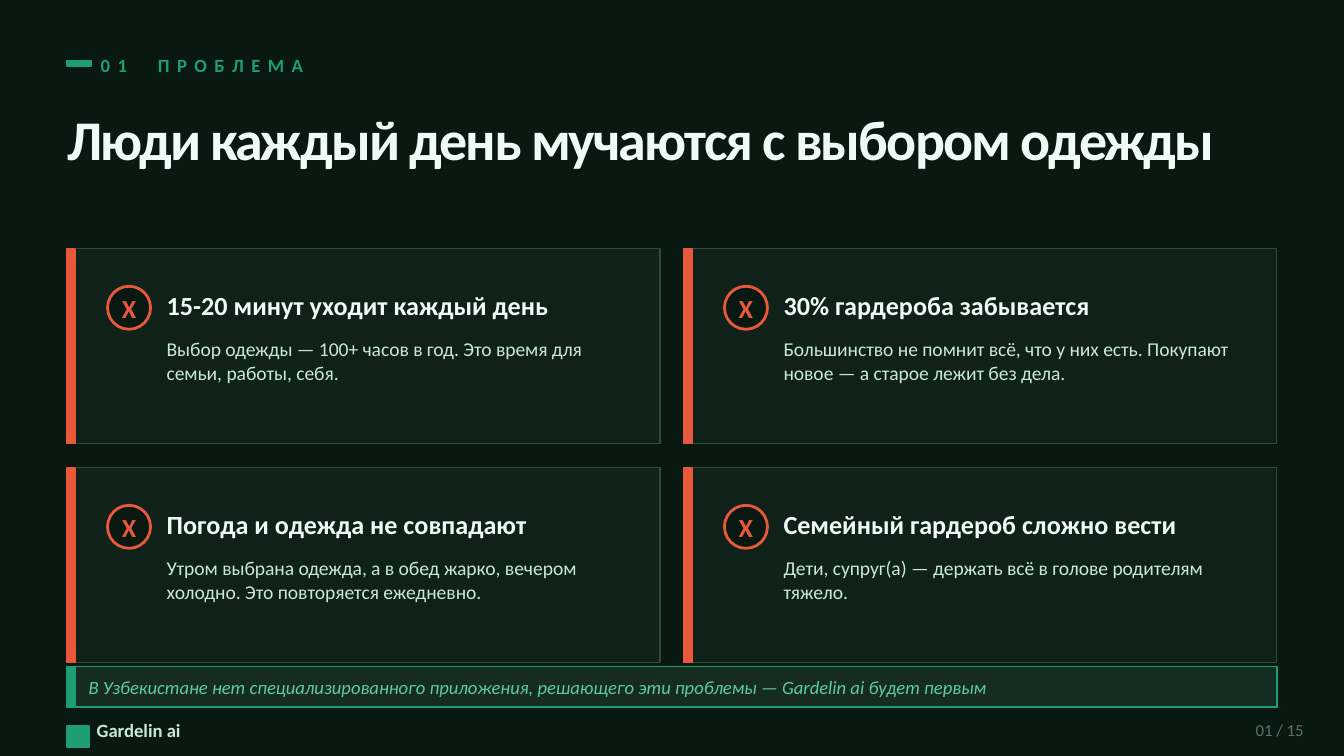
from itertools import product

from pptx import Presentation
from pptx.dml.color import RGBColor
from pptx.enum.shapes import MSO_SHAPE
from pptx.enum.text import MSO_ANCHOR, PP_ALIGN
from pptx.util import Inches, Pt

BACKGROUND = RGBColor(0x0A, 0x18, 0x12)
CARD = RGBColor(0x0F, 0x21, 0x19)
CARD_BORDER = RGBColor(0x2A, 0x4D, 0x3A)
BANNER = RGBColor(0x16, 0x2C, 0x22)
GREEN = RGBColor(0x1D, 0x9E, 0x75)
MINT = RGBColor(0x5D, 0xCA, 0xA5)
ORANGE = RGBColor(0xE8, 0x59, 0x3C)
WHITE = RGBColor(0xF0, 0xFA, 0xF6)
PALE = RGBColor(0xC8, 0xE8, 0xD8)
GREY = RGBColor(0x5A, 0x70, 0x68)

SLIDE_W = 10
SLIDE_H = SLIDE_W * 9 / 16
MARGIN = 0.5
CONTENT_W = 9
CARD_TOP = 1.85
CARD_W, CARD_H = 4.41, 1.45
GAP = 0.18
BAR_W = 0.06
BADGE = 0.32

CARDS = [
    ("15-20 минут уходит каждый день",
     "Выбор одежды — 100+ часов в год. Это время для семьи, работы, себя."),
    ("30% гардероба забывается",
     "Большинство не помнит всё, что у них есть. Покупают новое — а старое лежит без дела."),
    ("Погода и одежда не совпадают",
     "Утром выбрана одежда, а в обед жарко, вечером холодно. Это повторяется ежедневно."),
    ("Семейный гардероб сложно вести",
     "Дети, супруг(а) — держать всё в голове родителям тяжело."),
]


class SlideBuilder:
    font = "Calibri"

    def __init__(self, prs):
        self.slide = prs.slides.add_slide(prs.slide_layouts[6])
        fill = self.slide.background.fill
        fill.solid()
        fill.fore_color.rgb = BACKGROUND

    def shape(self, x, y, w, h, fill, line, line_width=1, kind=MSO_SHAPE.RECTANGLE):
        sp = self.slide.shapes.add_shape(kind, Inches(x), Inches(y), Inches(w), Inches(h))
        sp.shadow.inherit = False
        sp.fill.solid()
        sp.fill.fore_color.rgb = fill
        sp.line.color.rgb = line
        sp.line.width = Pt(line_width)

    def text(self, x, y, w, h, runs, size, color, bold=False, italic=False,
             align=PP_ALIGN.LEFT, anchor=MSO_ANCHOR.MIDDLE):
        """Add a text box; runs is a list of (text, letter spacing in points)."""
        box = self.slide.shapes.add_textbox(Inches(x), Inches(y), Inches(w), Inches(h))
        tf = box.text_frame
        tf.word_wrap = True
        tf.vertical_anchor = anchor
        tf.margin_left = tf.margin_right = tf.margin_top = tf.margin_bottom = 0
        p = tf.paragraphs[0]
        p.alignment = align
        for content, spacing in runs:
            r = p.add_run()
            r.text = content
            r.font.name = self.font
            r.font.size = Pt(size)
            r.font.color.rgb = color
            r.font.bold = bold
            r.font.italic = italic
            if spacing:
                r.font._element.set("spc", str(round(spacing * 100)))

    def card(self, x, y, title, body):
        self.shape(x, y, CARD_W, CARD_H, CARD, CARD_BORDER, 0.75)
        self.shape(x, y, BAR_W, CARD_H, ORANGE, ORANGE)
        badge = (x + 0.3, y + 0.28, BADGE, BADGE)
        self.shape(*badge, BACKGROUND, ORANGE, 1.5, MSO_SHAPE.OVAL)
        self.text(*badge, [("X", 0)], 14, ORANGE, bold=True, align=PP_ALIGN.CENTER)
        text_x, text_w = x + 0.74, CARD_W - 0.92
        self.text(text_x, y + 0.22, text_w, 0.4, [(title, 0)], 14, WHITE, bold=True)
        self.text(text_x, y + 0.66, text_w, 0.7, [(body, 0)], 10.5, PALE,
                  anchor=MSO_ANCHOR.TOP)

    def banner(self, y, h, message):
        self.shape(MARGIN, y, CONTENT_W, h, BANNER, GREEN)
        self.shape(MARGIN, y, BAR_W, h, GREEN, GREEN)
        self.text(MARGIN + 0.16, y, CONTENT_W - 0.3, h, [(message, 0)], 10, MINT, italic=True)

    def header(self, number, section, title):
        self.shape(MARGIN, 0.45, 0.18, 0.04, GREEN, GREEN)
        self.text(0.75, 0.34, 4, 0.28, [(number, 4), (" ", 10.3), (section, 4)],
                  10, GREEN, bold=True)
        self.text(MARGIN, 0.72, CONTENT_W, 0.62, [(title, -1)], 30, WHITE, bold=True)

    def footer(self, name, page):
        self.shape(MARGIN, 5.4, 0.16, 0.16, GREEN, GREEN)
        self.text(0.72, 5.32, 3, 0.22, [(name, 0)], 10, PALE, bold=True)
        self.text(9, 5.32, 0.7, 0.22, [(page, 0)], 9, GREY, align=PP_ALIGN.RIGHT)


def main():
    prs = Presentation()
    prs.slide_width, prs.slide_height = Inches(SLIDE_W), Inches(SLIDE_H)
    s = SlideBuilder(prs)
    s.header("01", "ПРОБЛЕМА", "Люди каждый день мучаются с выбором одежды")
    for (row, col), (title, body) in zip(product(range(2), repeat=2), CARDS):
        s.card(MARGIN + col * (CARD_W + GAP), CARD_TOP + row * (CARD_H + GAP), title, body)
    s.banner(4.96, 0.3, "В Узбекистане нет специализированного приложения, "
                        "решающего эти проблемы — Gardelin ai будет первым")
    s.footer("Gardelin ai", "01 / 15")
    prs.save("out.pptx")


if __name__ == "__main__":
    main()
